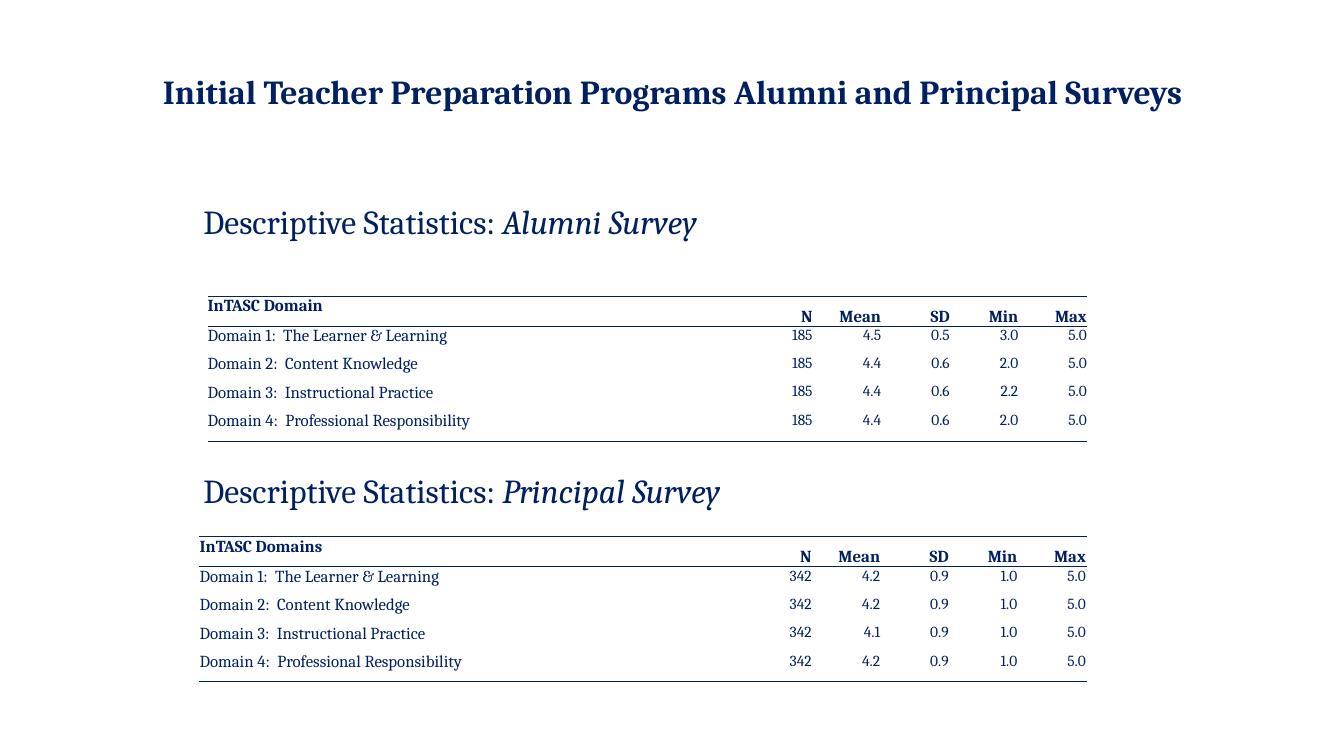
import pptx
import pptx.dml.color
import pptx.enum.text
import pptx.oxml.ns
import pptx.util
from lxml import etree
from pptx.util import Inches

NAVY = pptx.dml.color.RGBColor(0x00, 0x20, 0x60)
FONT = "Cambria"
ALIGN = pptx.enum.text.PP_ALIGN
ANCHOR = pptx.enum.text.MSO_ANCHOR

STATISTICS = ["N", "Mean", "SD", "Min", "Max"]
DOMAINS = [
    "Domain 1:  The Learner & Learning",
    "Domain 2:  Content Knowledge",
    "Domain 3:  Instructional Practice",
    "Domain 4:  Professional Responsibility",
]
ALUMNI = [
    ["185", "4.5", "0.5", "3.0", "5.0"],
    ["185", "4.4", "0.6", "2.0", "5.0"],
    ["185", "4.4", "0.6", "2.2", "5.0"],
    ["185", "4.4", "0.6", "2.0", "5.0"],
]
PRINCIPALS = [
    ["342", "4.2", "0.9", "1.0", "5.0"],
    ["342", "4.2", "0.9", "1.0", "5.0"],
    ["342", "4.1", "0.9", "1.0", "5.0"],
    ["342", "4.2", "0.9", "1.0", "5.0"],
]
ROW_HEIGHTS = [0.3, 0.28, 0.28, 0.28, 0.3]
STATISTIC_WIDTH = 0.68


def add_run(paragraph, text, size, bold=False, italic=False):
    run = paragraph.add_run()
    run.text = text
    run.font.name = FONT
    run.font.size = pptx.util.Pt(size)
    run.font.bold = bold
    run.font.italic = italic
    run.font.color.rgb = NAVY


def add_line_of_text(slide, left, top, width, height, align):
    """Add a vertically centred text box and return its paragraph."""
    frame = slide.shapes.add_textbox(
        Inches(left), Inches(top), Inches(width), Inches(height)).text_frame
    frame.word_wrap = True
    frame.vertical_anchor = ANCHOR.MIDDLE
    paragraph = frame.paragraphs[0]
    paragraph.alignment = align
    paragraph.line_spacing = 0.9
    return paragraph


def add_heading(slide, top, survey):
    heading = add_line_of_text(slide, 1.92, top, 8.86, 0.5, ALIGN.LEFT)
    add_run(heading, "Descriptive Statistics: ", 24)
    add_run(heading, survey, 24, italic=True)


def set_borders(cell, ruled_sides):
    """Rule the given sides (T, B) in navy and clear the others."""
    properties = cell._tc.get_or_add_tcPr()
    qn = pptx.oxml.ns.qn
    for side in "LRTB":
        line = etree.SubElement(properties, qn(f"a:ln{side}"))
        if side in ruled_sides:
            line.set("w", str(pptx.util.Pt(1)))
            fill = etree.SubElement(line, qn("a:solidFill"))
            etree.SubElement(fill, qn("a:srgbClr"), val=str(NAVY))
        else:
            etree.SubElement(line, qn("a:noFill"))


def fill_cell(cell, text, is_header, is_label, inset, ruled_sides):
    set_borders(cell, ruled_sides)
    cell.fill.background()
    cell.margin_left = cell.margin_right = cell.margin_top = Inches(inset)
    cell.margin_bottom = 0
    cell.vertical_anchor = (
        ANCHOR.BOTTOM if is_header and not is_label else ANCHOR.TOP)
    paragraph = cell.text_frame.paragraphs[0]
    paragraph.alignment = ALIGN.LEFT if is_label else ALIGN.RIGHT
    add_run(paragraph, text, 12 if is_header or is_label else 11, is_header)


def add_survey_table(slide, left, top, label_width, label, results, inset):
    rows = [[label] + STATISTICS]
    rows += [[domain] + values for domain, values in zip(DOMAINS, results)]
    widths = [label_width] + [STATISTIC_WIDTH] * len(STATISTICS)
    table = slide.shapes.add_table(
        len(rows), len(widths), Inches(left), Inches(top),
        Inches(sum(widths)), Inches(sum(ROW_HEIGHTS))).table
    table.first_row = False
    table.horz_banding = False
    for column, width in zip(table.columns, widths):
        column.width = Inches(width)
    ruled_sides = {0: "TB", 1: "T", len(rows) - 1: "B"}
    for r, texts in enumerate(rows):
        table.rows[r].height = Inches(ROW_HEIGHTS[r])
        for c, text in enumerate(texts):
            fill_cell(table.cell(r, c), text, r == 0, c == 0, inset,
                      ruled_sides.get(r, ""))


def main():
    presentation = pptx.Presentation()
    presentation.slide_width = Inches(13.33)
    presentation.slide_height = Inches(7.5)
    slide = presentation.slides.add_slide(presentation.slide_layouts[6])

    title = add_line_of_text(slide, 0.92, 0.4, 11.5, 1.05, ALIGN.CENTER)
    add_run(title, "Initial Teacher Preparation Programs Alumni and "
            "Principal Surveys", 24, bold=True)
    add_heading(slide, 1.97, "Alumni Survey")
    add_heading(slide, 4.64, "Principal Survey")
    add_survey_table(slide, 1.97, 5.32, 5.41, "InTASC Domains", PRINCIPALS, 0.01)
    add_survey_table(slide, 2.06, 2.94, 5.32, "InTASC Domain", ALUMNI, 0)

    presentation.save("out.pptx")


if __name__ == "__main__":
    main()
